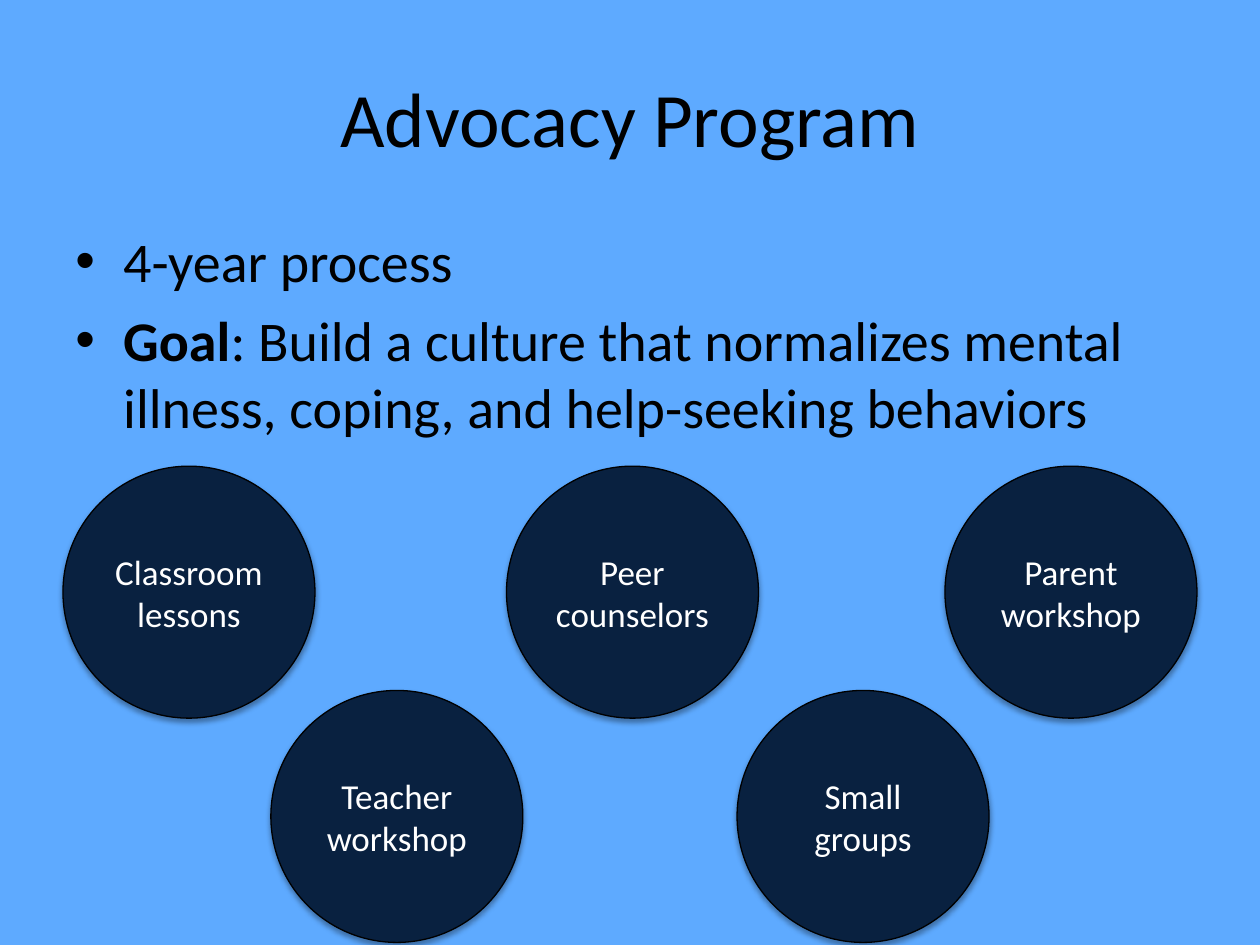
"""Build the Advocacy Program slide."""
from lxml.etree import SubElement
from pptx import Presentation
from pptx.dml.color import RGBColor
from pptx.enum.shapes import MSO_SHAPE
from pptx.enum.text import MSO_ANCHOR, PP_ALIGN
from pptx.oxml.ns import qn
from pptx.util import Inches, Pt

SKY = RGBColor(0x5E, 0xAA, 0xFF)
NAVY = RGBColor(0x09, 0x21, 0x40)
BLACK = RGBColor(0, 0, 0)
WHITE = RGBColor(255, 255, 255)
FONT = "Calibri"

TITLE = "Advocacy Program"
POINTS = [
    [("4-year process", False)],
    [("Goal", True),
     (": Build a culture that normalizes mental illness, coping, "
      "and help-seeking behaviors", False)],
]
DIAMETER = 2
ACTIVITY_ROWS = [
    (3.7, [(0.5, "Classroom lessons"), (4.02, "Peer counselors"), (7.5, "Parent workshop")]),
    (5.48, [(2.15, "Teacher workshop"), (5.85, "Small groups")]),
]


def style_runs(paragraph, size, color):
    for run in paragraph.runs:
        run.font.name = FONT
        run.font.size = Pt(size)
        run.font.color.rgb = color


def add_frame(slide, left, top, width, height):
    frame = slide.shapes.add_textbox(*map(Inches, (left, top, width, height))).text_frame
    frame.word_wrap = True
    return frame


def add_title(slide):
    frame = add_frame(slide, 0.5, 0.3, 9, 1.25)
    frame.vertical_anchor = MSO_ANCHOR.MIDDLE
    frame.text = TITLE
    heading = frame.paragraphs[0]
    heading.alignment = PP_ALIGN.CENTER
    style_runs(heading, 44, BLACK)


def add_points(slide):
    frame = add_frame(slide, 0.5, 1.75, 9, 4.95)
    for index, parts in enumerate(POINTS):
        point = frame.add_paragraph() if index else frame.paragraphs[0]
        point.space_before = Pt(6.4)
        for words, bold in parts:
            run = point.add_run()
            run.text = words
            run.font.bold = bold
        style_runs(point, 32, BLACK)
        properties = point._p.get_or_add_pPr()
        properties.set("marL", str(Inches(0.38)))
        properties.set("indent", str(Inches(-0.38)))
        SubElement(properties, qn("a:buFont"), typeface="Arial")
        SubElement(properties, qn("a:buChar"), char="•")


def add_shadow(shape):
    shape.shadow.inherit = False
    effects = shape._element.spPr.find(qn("a:effectLst"))
    shadow = SubElement(effects, qn("a:outerShdw"), blurRad=str(Pt(3.1)),
                        dist=str(Pt(1.8)), dir="5400000", rotWithShape="0")
    tint = SubElement(shadow, qn("a:srgbClr"), val=str(BLACK))
    SubElement(tint, qn("a:alpha"), val="35000")


def add_activity(slide, left, top, label):
    circle = slide.shapes.add_shape(
        MSO_SHAPE.OVAL, *map(Inches, (left, top, DIAMETER, DIAMETER)))
    circle.fill.solid()
    circle.fill.fore_color.rgb = NAVY
    circle.line.color.rgb = BLACK
    circle.line.width = Pt(0.75)
    add_shadow(circle)
    frame = circle.text_frame
    frame.vertical_anchor = MSO_ANCHOR.MIDDLE
    frame.text = label
    frame.paragraphs[0].alignment = PP_ALIGN.CENTER
    style_runs(frame.paragraphs[0], 20, WHITE)


def main():
    deck = Presentation()
    deck.slide_width, deck.slide_height = Inches(10), Inches(7.5)
    slide = deck.slides.add_slide(deck.slide_layouts[6])
    slide.background.fill.solid()
    slide.background.fill.fore_color.rgb = SKY
    add_title(slide)
    add_points(slide)
    for top, activities in ACTIVITY_ROWS:
        for left, label in activities:
            add_activity(slide, left, top, label)
    deck.save("out.pptx")


if __name__ == "__main__":
    main()
